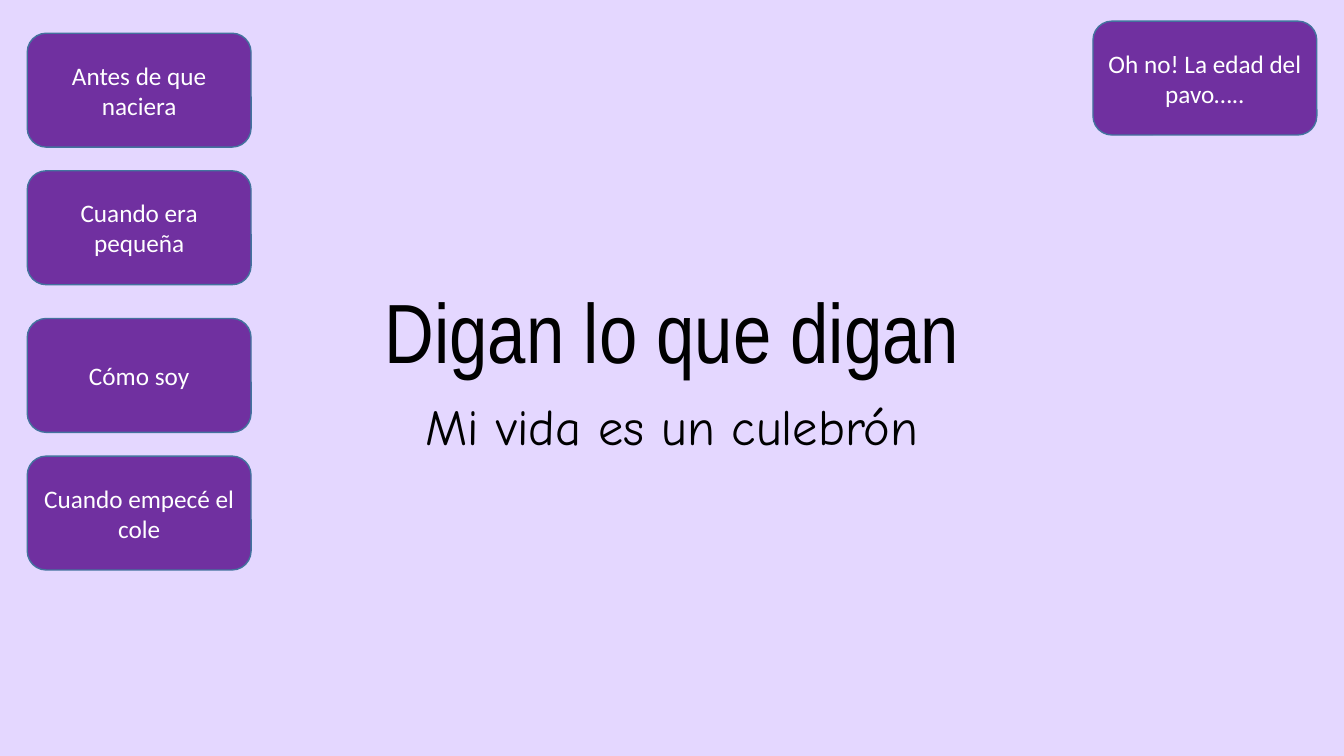
from dataclasses import dataclass

from pptx import Presentation
from pptx.dml.color import RGBColor
from pptx.enum.shapes import MSO_SHAPE
from pptx.enum.text import MSO_ANCHOR, MSO_AUTO_SIZE, PP_ALIGN
from pptx.util import Inches, Pt

ROUNDED = MSO_SHAPE.ROUNDED_RECTANGLE
CENTER = PP_ALIGN.CENTER
TOP, MIDDLE, BOTTOM = MSO_ANCHOR.TOP, MSO_ANCHOR.MIDDLE, MSO_ANCHOR.BOTTOM
NO_AUTOFIT = MSO_AUTO_SIZE.NONE
TITLE_SLIDE = 0

SLIDE_W, SLIDE_H = 13.33, 7.5
BUTTON_W, BUTTON_H = 2.22, 1.13
MARGIN = 0.27
FIRST_ROW = 0.33
ROW_PITCH = 1.365
PAIR_PITCH = 2.83
HEADING_X, HEADING_W = SLIDE_W / 8, SLIDE_W * 3 / 4

CHAPTERS = [
    "Antes de que naciera",
    "Cuando era pequeña",
    "Cómo soy",
    "Cuando empecé el cole",
]


@dataclass(frozen=True)
class Theme:
    background: RGBColor = RGBColor(0xE4, 0xD7, 0xFF)
    button: RGBColor = RGBColor(0x70, 0x30, 0xA0)
    outline: RGBColor = RGBColor(0x43, 0x73, 0x9E)
    dark: RGBColor = RGBColor(0, 0, 0)
    light: RGBColor = RGBColor(0xFF, 0xFF, 0xFF)
    title_font: str = "Arial Narrow"
    subtitle_font: str = "Comic Neue"
    button_font: str = "Calibri"
    title_size: int = 60
    subtitle_size: int = 36
    button_size: int = 18


THEME = Theme()


def write(shape, text, font, size, color, anchor):
    frame = shape.text_frame
    frame.word_wrap = True
    frame.auto_size = NO_AUTOFIT
    frame.vertical_anchor = anchor
    paragraph = frame.paragraphs[0]
    paragraph.alignment = CENTER
    run = paragraph.add_run()
    run.text = text
    run.font.name = font
    run.font.size = Pt(size)
    run.font.color.rgb = color
    return paragraph


def place_heading(placeholder, top, height, text, font, size, anchor, space_before=0):
    placeholder.left, placeholder.top = Inches(HEADING_X), Inches(top)
    placeholder.width, placeholder.height = Inches(HEADING_W), Inches(height)
    paragraph = write(placeholder, text, font, size, THEME.dark, anchor)
    paragraph.line_spacing = 0.9
    paragraph.space_before = Pt(space_before)


def add_button(slide, left, top, text):
    button = slide.shapes.add_shape(
        ROUNDED, Inches(left), Inches(top), Inches(BUTTON_W), Inches(BUTTON_H))
    button.shadow.inherit = False
    button.fill.solid()
    button.fill.fore_color.rgb = THEME.button
    button.line.color.rgb = THEME.outline
    button.line.width = Pt(1)
    write(button, text, THEME.button_font, THEME.button_size, THEME.light, MIDDLE)


def main():
    deck = Presentation()
    deck.slide_width, deck.slide_height = Inches(SLIDE_W), Inches(SLIDE_H)
    slide = deck.slides.add_slide(deck.slide_layouts[TITLE_SLIDE])
    slide.background.fill.solid()
    slide.background.fill.fore_color.rgb = THEME.background

    title, subtitle = slide.placeholders
    place_heading(title, 1.23, 2.61, "Digan lo que digan",
                  THEME.title_font, THEME.title_size, BOTTOM)
    place_heading(subtitle, 3.94, 1.81, "Mi vida es un culebrón",
                  THEME.subtitle_font, THEME.subtitle_size, TOP, space_before=10)

    for index, chapter in enumerate(CHAPTERS):
        pair, row = divmod(index, 2)
        add_button(slide, MARGIN, FIRST_ROW + pair * PAIR_PITCH + row * ROW_PITCH, chapter)
    add_button(slide, SLIDE_W - MARGIN - BUTTON_W, 0.21, "Oh no! La edad del pavo…..")

    deck.save("out.pptx")


if __name__ == "__main__":
    main()
